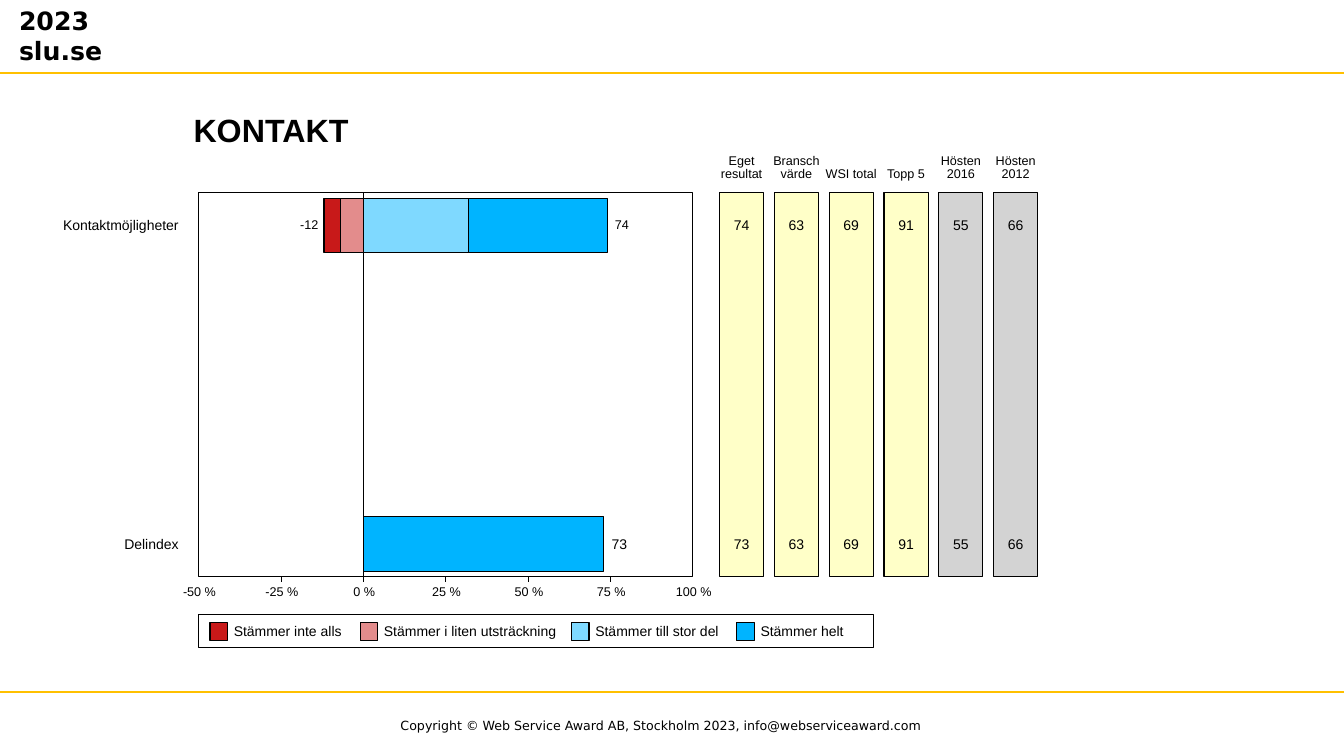
from pptx import Presentation
from pptx.dml.color import RGBColor
from pptx.enum.shapes import MSO_CONNECTOR as Conn, MSO_SHAPE as Shape
from pptx.enum.text import MSO_AUTO_SIZE as Auto, PP_ALIGN as Align
from pptx.oxml.ns import qn
from pptx.util import Pt
from lxml.etree import SubElement

# Colours
BLACK, GOLD, CREAM, GREY = "000000", "FFC000", "FFFFC8", "D3D3D3"
RED, ROSE, SKY, BLUE = "C81919", "E38C8C", "7FD9FF", "00B4FF"

# Plot frame and its percentage scale
LEFT, TOP, WIDTH, HEIGHT = 142, 137.5, 353, 274.5
BASE = TOP + HEIGHT
LOW, HIGH, STEP = -50, 100, 25

# Score columns: header lines, fill, score, index
COL_LEFT, COL_STEP, COL_WIDTH = 514, 39.15, 31.5
COLS = [
    (["Eget", "resultat"], CREAM, 74, 73),
    (["Bransch", "värde"], CREAM, 63, 63),
    (["WSI total"], CREAM, 69, 69),
    (["Topp 5"], CREAM, 91, 91),
    (["Hösten", "2016"], GREY, 55, 55),
    (["Hösten", "2012"], GREY, 66, 66),
]

# Rows: label, top, bar segments (start, end, fill), label size
ROWS = [
    ("Kontaktmöjligheter", 141.5,
     [(-7, 0, ROSE), (-12, -7, RED), (0, 32, SKY), (32, 74, BLUE)], 9),
    ("Delindex", 369, [(0, 73, BLUE)], 10),
]
BAR, DROP = 39, 13.25

# Legend: swatch left, fill, label, label width
LEGEND = [
    (150, RED, "Stämmer inte alls", 90),
    (257.25, ROSE, "Stämmer i liten utsträckning", 140),
    (408.25, SKY, "Stämmer till stor del", 101.5),
    (526.25, BLUE, "Stämmer helt", 70.5),
]


def paint(hue):
    return RGBColor.from_string(hue)


def scale(value):
    return LEFT + WIDTH * (value - LOW) / (HIGH - LOW)


def rect(slide, x, y, w, h, fill=None):
    box = slide.shapes.add_shape(Shape.RECTANGLE, Pt(x), Pt(y), Pt(w), Pt(h))
    box.shadow.inherit = False
    if fill:
        box.fill.solid()
        box.fill.fore_color.rgb = paint(fill)
    else:
        box.fill.background()
    box.line.color.rgb = paint(BLACK)
    box.line.width = Pt(0.75)


def line(slide, x1, y1, x2, y2, hue=BLACK, width=0.75):
    rule = slide.shapes.add_connector(
        Conn.STRAIGHT, Pt(x1), Pt(y1), Pt(x2), Pt(y2))
    rule.line.color.rgb = paint(hue)
    rule.line.width = Pt(width)
    SubElement(rule._element.spPr, qn("a:effectLst"))


def text(slide, x, y, w, h, lines, size, align=Align.LEFT,
         font="Arial", bold=False, inset=False):
    box = slide.shapes.add_textbox(Pt(x), Pt(y), Pt(w), Pt(h))
    frame = box.text_frame
    frame.word_wrap = inset
    frame.auto_size = Auto.SHAPE_TO_FIT_TEXT
    if not inset:
        frame.margin_left = frame.margin_right = 0
        frame.margin_top = frame.margin_bottom = 0
    para = frame.paragraphs[0]
    para.alignment = align
    for i, words in enumerate(lines):
        if i:
            para.add_line_break()
        run = para.add_run()
        run.text = words
        run.font.name = font
        run.font.size = Pt(size)
        run.font.bold = bold
        run.font.color.rgb = paint(BLACK)


def banner(slide):
    text(slide, 6.5, 0, 929, 51, ["2023", "slu.se"], 18,
         font="DejaVu Sans", bold=True, inset=True)
    for y in (52.25, 494.5):
        line(slide, 0, y, 960, y, GOLD, 1.5)
    text(slide, 279, 509, 402, 18,
         ["Copyright © Web Service Award AB, Stockholm 2023, "
          "info@webserviceaward.com"], 9, font="DejaVu Sans", inset=True)


def axis(slide):
    rect(slide, LEFT, TOP, WIDTH, HEIGHT)
    for value in range(LOW, HIGH + 1, STEP):
        x = scale(value)
        if LOW < value < HIGH:
            line(slide, x, BASE, x, BASE + 3.5)
        text(slide, x - 13.5, 417, 28, 11, [f"{value} %"], 9, Align.CENTER)
    line(slide, scale(0), BASE + 3.5, scale(0), TOP)


def bars(slide):
    for label, top, parts, size in ROWS:
        y = top + DROP
        text(slide, 43.5, y, 84, 12, [label], 10, Align.RIGHT)
        for start, end, fill in parts:
            rect(slide, scale(start), top, scale(end) - scale(start),
                 BAR, fill)
        low = min(part[0] for part in parts)
        high = max(part[1] for part in parts)
        if low < 0:
            text(slide, scale(low) - 20, y + 0.5, 16, 11, [str(low)], size,
                 Align.RIGHT)
        text(slide, scale(high) + 5.5, y + 0.5, 14, 11, [str(high)], size)


def scores(slide):
    for i, (heads, fill, *marks) in enumerate(COLS):
        x = COL_LEFT + i * COL_STEP
        rect(slide, x, TOP, COL_WIDTH, HEIGHT, fill)
        # Header lines stand on a shared bottom line, wider than the column
        for up, head in enumerate(reversed(heads)):
            text(slide, x - 5, 118.5 - 9.25 * up, COL_WIDTH + 10, 11,
                 [head], 9, Align.CENTER)
        for row, mark in zip(ROWS, marks):
            text(slide, x, row[1] + DROP, COL_WIDTH, 12, [str(mark)], 10,
                 Align.CENTER)


def legend(slide):
    rect(slide, LEFT, 439, 482, 23.5)
    for x, fill, label, width in LEGEND:
        rect(slide, x, 444.75, 12.5, 13, fill)
        text(slide, x + 17, 444.5, width, 15, [label], 10)


def main():
    deck = Presentation()
    deck.slide_width, deck.slide_height = Pt(960), Pt(540)
    slide = deck.slides.add_slide(deck.slide_layouts[6])
    banner(slide)
    text(slide, 138.25, 79, 122.5, 31, ["KONTAKT"], 23, bold=True)
    axis(slide)
    bars(slide)
    scores(slide)
    legend(slide)
    deck.save("out.pptx")


if __name__ == "__main__":
    main()
